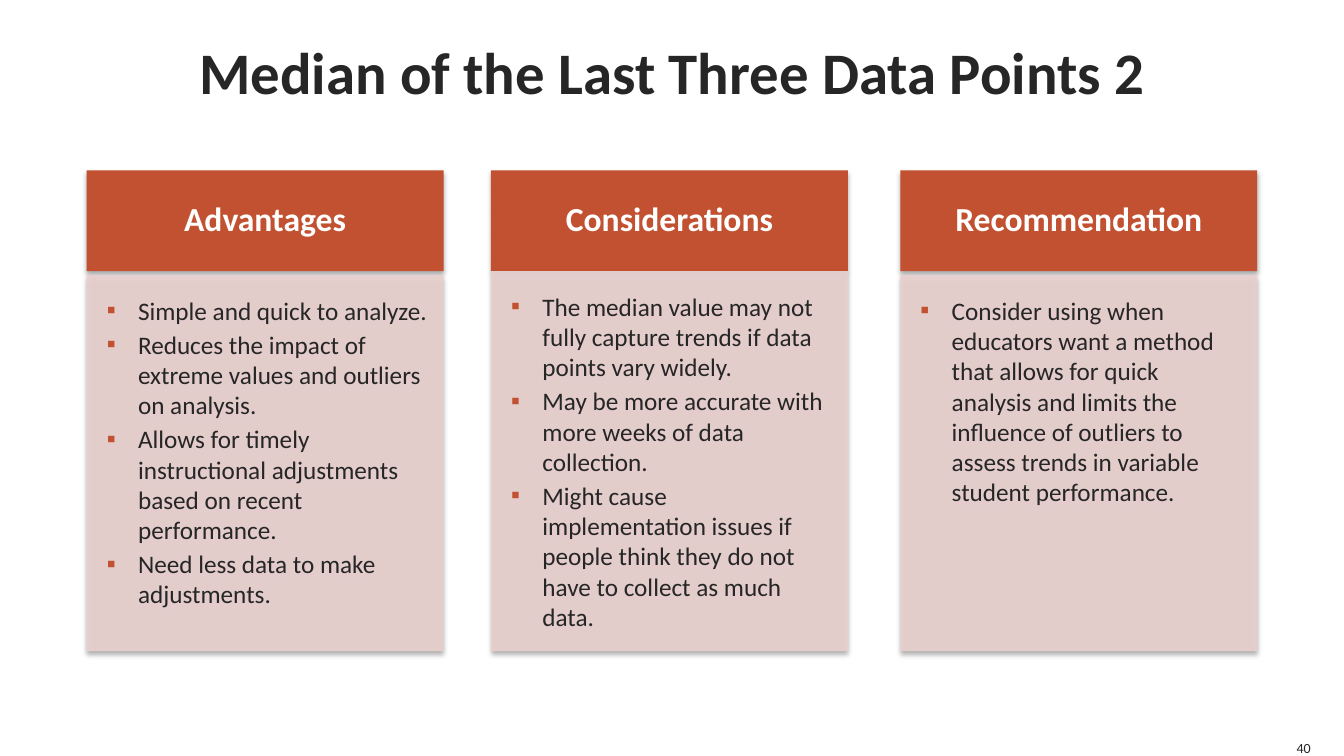
"""Build the slide comparing uses of the median of the last three data points."""
from lxml.etree import SubElement
from pptx import Presentation
from pptx.dml.color import RGBColor
from pptx.enum.shapes import MSO_SHAPE as Shape
from pptx.enum.text import MSO_ANCHOR as Anchor, MSO_AUTO_SIZE as AutoSize, PP_ALIGN as Align
from pptx.oxml.ns import qn
from pptx.util import Inches, Pt

TITLE = "Median of the Last Three Data Points 2"
SLIDE_NUMBER = "40"
COLUMNS = [
    {"left": 0.86, "body_top": 2.73, "heading": "Advantages", "points": [
        "Simple and quick to analyze.",
        "Reduces the impact of extreme values and outliers on analysis.",
        "Allows for timely instructional adjustments based on recent performance.",
        "Need less data to make adjustments.",
    ]},
    {"left": 4.87, "body_top": 2.69, "heading": "Considerations", "points": [
        "The median value may not fully capture trends if data points vary widely.",
        "May be more accurate with more weeks of data collection.",
        "Might cause implementation issues if people think they do not have to collect as much data.",
    ]},
    {"left": 8.93, "body_top": 2.73, "heading": "Recommendation", "points": [
        "Consider using when educators want a method that allows for quick analysis and limits "
        "the influence of outliers to assess trends in variable student performance.",
    ]},
]
RUST, PINK, DARK, WHITE = "C25131", "E9D0CE", "262626", "FFFFFF"
COLUMN_WIDTH, HEADER_TOP, HEADER_HEIGHT, BODY_BOTTOM = 3.54, 1.69, 1, 6.46
TITLE_FONT = {"name": "Calibri", "size": Pt(42), "bold": True}
HEADING_FONT = {"name": "Calibri", "size": Pt(24), "bold": True}
POINT_FONT = {"name": "Calibri", "size": Pt(18), "bold": False}
NUMBER_FONT = {"name": "Calibri", "size": Pt(10), "bold": False}
CENTRED = {"alignment": Align.CENTER, "line_spacing": 0.9}
LISTED = {"alignment": Align.LEFT, "level": 1, "space_after": Pt(2.7)}


def color(value):
    return RGBColor.from_string(value)


def apply(target, values):
    for name, value in values.items():
        setattr(target, name, value)


def set_frame(frame, anchor, margins, wrap=True, auto_size=AutoSize.NONE):
    sides = ("margin_left", "margin_top", "margin_right", "margin_bottom")
    apply(frame, dict(zip(sides, map(Inches, margins))))
    apply(frame, {"vertical_anchor": anchor, "word_wrap": wrap, "auto_size": auto_size})


def add_bullet(paragraph):
    properties = paragraph._p.get_or_add_pPr()
    properties.set("marL", str(Inches(0.31)))
    properties.set("indent", str(Inches(-0.31)))
    bullet_color = SubElement(properties, qn("a:buClr"))
    SubElement(bullet_color, qn("a:srgbClr"), val=RUST)
    SubElement(properties, qn("a:buFont"), typeface="Calibri")
    SubElement(properties, qn("a:buChar"), char="▪")


def write(frame, lines, font, font_color, layout, bulleted=False):
    for index, line in enumerate(lines):
        paragraph = frame.add_paragraph() if index else frame.paragraphs[0]
        paragraph.text = line
        apply(paragraph, layout)
        if bulleted:
            add_bullet(paragraph)
        for target in (paragraph.font, paragraph.runs[0].font):
            apply(target, font)
            target.color.rgb = color(font_color)


def add_panel(slide, left, top, bottom, fill, opacity=100):
    panel = slide.shapes.add_shape(
        Shape.RECTANGLE, *map(Inches, (left, top, COLUMN_WIDTH, bottom - top)))
    panel.fill.solid()
    panel.fill.fore_color.rgb = color(fill)
    panel.line.fill.background()
    panel.shadow.inherit = False
    properties = panel._element.spPr
    if opacity < 100:
        fill_color = properties.find(qn("a:solidFill")).find(qn("a:srgbClr"))
        SubElement(fill_color, qn("a:alpha"), val=str(opacity * 1000))
    shadow = SubElement(properties.find(qn("a:effectLst")), qn("a:outerShdw"),
                        blurRad=str(Pt(3.5)), dist=str(Pt(2.2)), dir="5400000", rotWithShape="0")
    shadow_color = SubElement(shadow, qn("a:srgbClr"), val="000000")
    SubElement(shadow_color, qn("a:alpha"), val="32000")
    return panel


def add_column(slide, column):
    header_bottom = HEADER_TOP + HEADER_HEIGHT
    header = add_panel(slide, column["left"], HEADER_TOP, header_bottom, RUST)
    set_frame(header.text_frame, Anchor.MIDDLE, (0.19, 0.11, 0.19, 0.11))
    write(header.text_frame, [column["heading"]], HEADING_FONT, WHITE, CENTRED)
    body = add_panel(slide, column["left"], column["body_top"], BODY_BOTTOM, PINK, 90)
    set_frame(body.text_frame, Anchor.TOP, (0.2, 0.2, 0.14, 0.16))
    write(body.text_frame, column["points"], POINT_FONT, DARK, LISTED, bulleted=True)


def main():
    presentation = Presentation()
    apply(presentation, {"slide_width": Inches(13.33), "slide_height": Inches(7.5)})
    slide = presentation.slides.add_slide(presentation.slide_layouts.get_by_name("Title Only"))
    title = slide.shapes.title
    apply(title, {"left": Inches(0.5), "top": Inches(0),
                  "width": Inches(12.33), "height": Inches(1.4)})
    set_frame(title.text_frame, Anchor.MIDDLE, (0, 0, 0, 0))
    write(title.text_frame, [TITLE], TITLE_FONT, DARK, {"alignment": Align.CENTER})
    for column in COLUMNS:
        add_column(slide, column)
    number = slide.shapes.add_textbox(*map(Inches, (12.83, 7.33, 0.17, 0.17)))
    set_frame(number.text_frame, Anchor.BOTTOM, (0, 0, 0, 0), False, AutoSize.SHAPE_TO_FIT_TEXT)
    write(number.text_frame, [SLIDE_NUMBER], NUMBER_FONT, DARK, {"alignment": Align.RIGHT})
    presentation.save("out.pptx")


if __name__ == "__main__":
    main()
